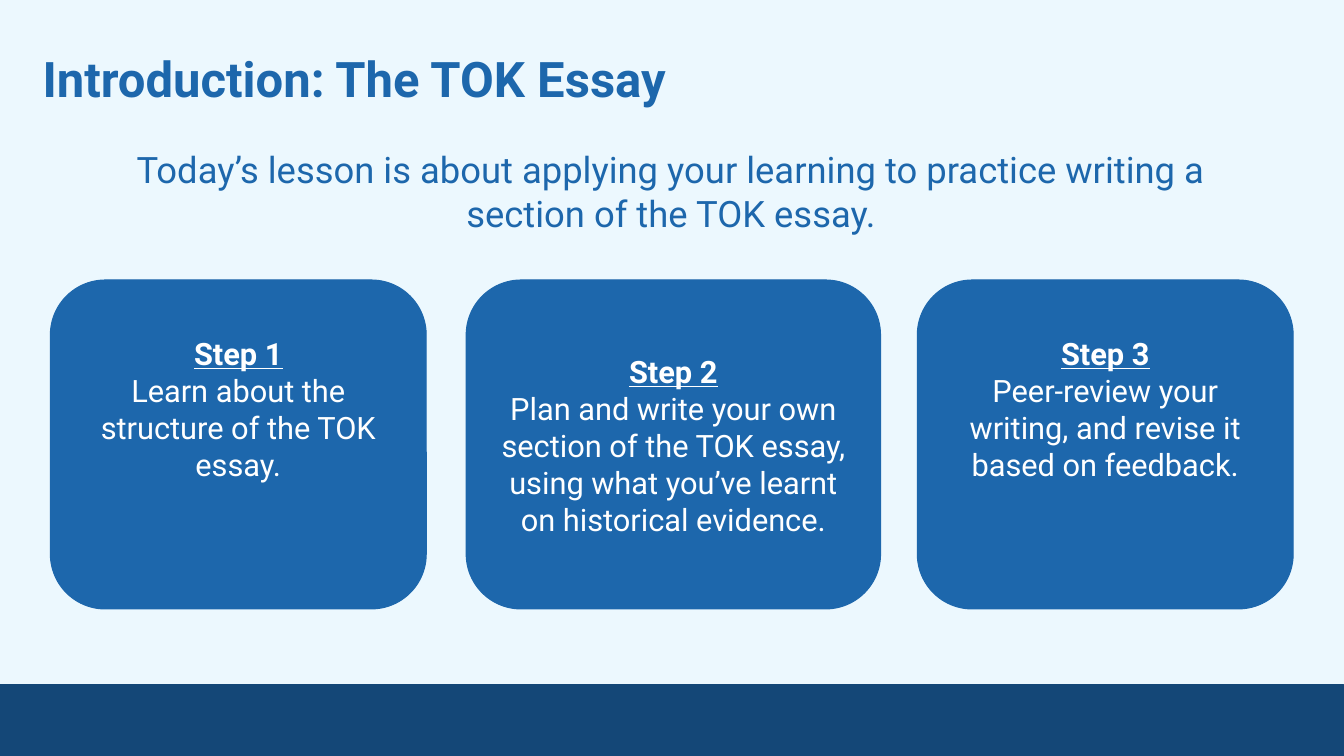
import pptx
import pptx.dml.color
import pptx.enum.shapes
import pptx.enum.text
import pptx.util

Pt = pptx.util.Pt
SHAPES = pptx.enum.shapes.MSO_SHAPE
ALIGN = pptx.enum.text.PP_ALIGN
ANCHOR = pptx.enum.text.MSO_ANCHOR

# Content
TITLE = "Introduction: The TOK Essay"
INTRO = ("Today’s lesson is about applying your learning to practice "
         "writing a section of the TOK essay.")
# heading, text, left, width, space above the text
STEPS = [
    ("Step 1", "Learn about the structure of the TOK essay.", 36, 268.5, 27.5),
    ("Step 2", "Plan and write your own section of the TOK essay, "
               "using what you’ve learnt on historical evidence.", 333, 296, 40.5),
    ("Step 3", "Peer-review your writing, and revise it based on feedback.",
     655.25, 268.5, 27.5),
]

# Format
WIDTH, HEIGHT = 960, 540
BAND_TOP = 489
CARD_TOP, CARD_HEIGHT = 200, 235
PALE, BLUE, NAVY, WHITE = "ECF8FE", "1D67AC", "144777", "FFFFFF"
TITLE_FONT = {"name": "Roboto", "size": Pt(35), "bold": True}
INTRO_FONT = {"name": "Roboto", "size": Pt(26), "bold": False}
TEXT_FONT = {"name": "Roboto", "size": Pt(22), "bold": False}
HEADING_FONT = {**TEXT_FONT, "bold": True, "underline": True}


def rgb(value):
    return pptx.dml.color.RGBColor.from_string(value)


def set_all(obj, values):
    for name, value in values.items():
        setattr(obj, name, value)


def write(sp, lines, color, align, inset, top=None):
    """Fill a shape with (text, font values) paragraphs, set from the top."""
    tf = sp.text_frame
    set_all(tf, {
        "word_wrap": True,
        "auto_size": pptx.enum.text.MSO_AUTO_SIZE.NONE,
        "vertical_anchor": ANCHOR.TOP,
        "margin_left": Pt(inset), "margin_right": Pt(inset),
        "margin_top": Pt(inset if top is None else top),
        "margin_bottom": Pt(inset),
    })
    for i, (text, font) in enumerate(lines):
        p = tf.paragraphs[0] if i == 0 else tf.add_paragraph()
        p.alignment = align
        r = p.add_run()
        r.text = text
        set_all(r.font, font)
        r.font.color.rgb = rgb(color)


def add_block(s, kind, box, color):
    sp = s.shapes.add_shape(kind, *map(Pt, box))
    sp.shadow.inherit = False
    sp.fill.solid()
    sp.fill.fore_color.rgb = rgb(color)
    sp.line.color.rgb = rgb(color)
    sp.line.width = Pt(0.75)
    return sp


prs = pptx.Presentation()
prs.slide_width, prs.slide_height = Pt(WIDTH), Pt(HEIGHT)
s = prs.slides.add_slide(prs.slide_layouts[5])
s.background.fill.solid()
s.background.fill.fore_color.rgb = rgb(PALE)

# Bottom band
add_block(s, SHAPES.RECTANGLE, (0, BAND_TOP, WIDTH, HEIGHT - BAND_TOP), NAVY)

# Title and introduction
title = s.shapes.title
set_all(title, {"left": Pt(21), "top": Pt(25), "width": Pt(878), "height": Pt(62)})
write(title, [(TITLE, TITLE_FONT)], BLUE, ALIGN.LEFT, 9.4)
intro = s.shapes.add_textbox(Pt(65.5), Pt(98), Pt(828), Pt(78))
write(intro, [(INTRO, INTRO_FONT)], BLUE, ALIGN.CENTER, 7.2)

# Step cards
for heading, text, left, width, top in STEPS:
    card = add_block(s, SHAPES.ROUNDED_RECTANGLE,
                     (left, CARD_TOP, width, CARD_HEIGHT), BLUE)
    card.adjustments[0] = 0.167
    write(card, [(heading, HEADING_FONT), (text, TEXT_FONT)],
          WHITE, ALIGN.CENTER, 7.2, top)

prs.save("out.pptx")
